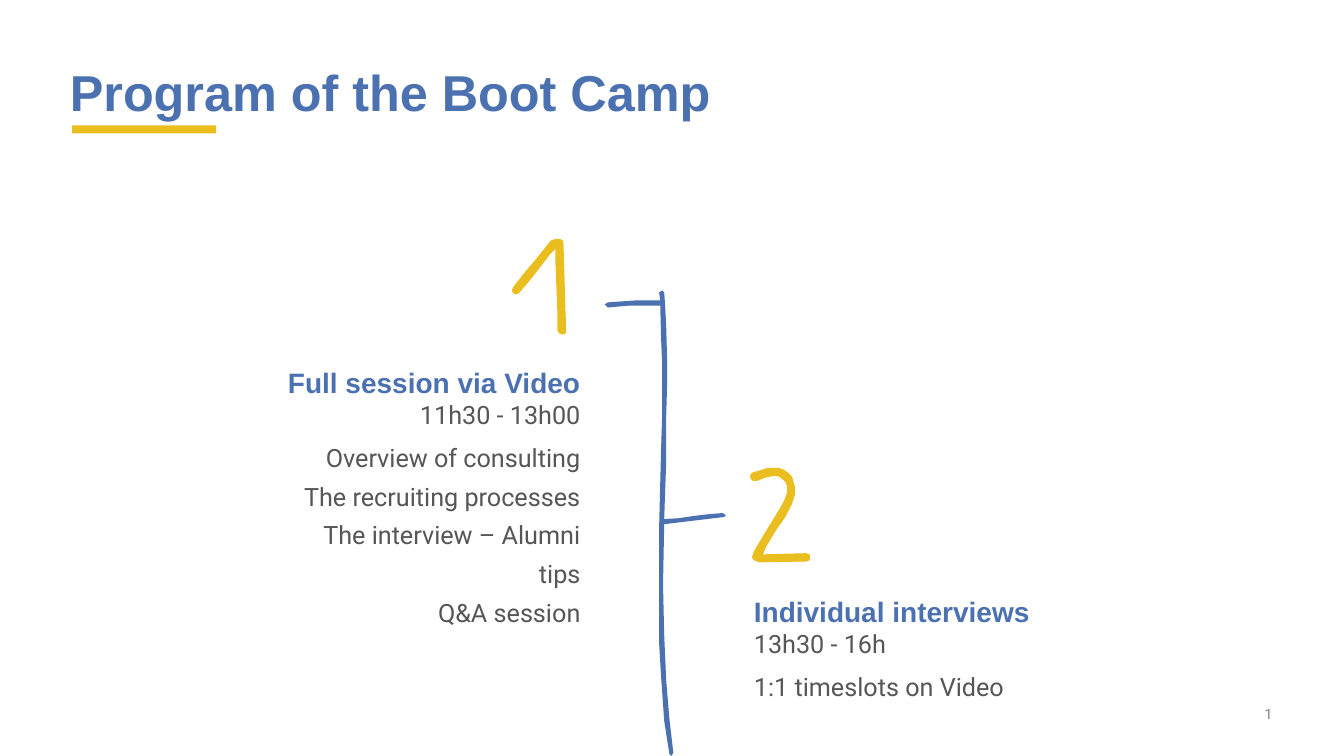
from dataclasses import dataclass

from pptx import Presentation
from pptx.dml.color import RGBColor
from pptx.enum.shapes import MSO_SHAPE as Shape
from pptx.enum.text import MSO_ANCHOR as Anchor, MSO_AUTO_SIZE as AutoSize, PP_ALIGN as Align
from pptx.util import Cm, Pt


@dataclass(frozen=True)
class TextStyle:
    size: float
    color: str
    font: str = "Roboto"
    bold: bool = False


class Theme:
    blue = "4B71B1"
    yellow = "EBBE20"
    title = TextStyle(36, blue, "Arial", True)
    heading = TextStyle(20, blue, "Arial", True)
    body = TextStyle(18, "565656")
    page_number = TextStyle(10, "7E7E7E")


@dataclass(frozen=True)
class Line:
    text: str
    style: TextStyle
    before: float = 0
    spacing: float = 1.0
    indent: float = 0


ONE = [
    (14, 6.02), (13.87, 6.07), (13.77, 6.2), (13.49, 6.55), (13.21, 6.88), (12.93, 7.24),
    (12.9, 7.32), (12.93, 7.39), (13, 7.42), (13.08, 7.39), (13.44, 6.96), (13.87, 6.4),
    (14, 6.27), (14, 6.68), (14.05, 7.92), (14.05, 8.33), (14.1, 8.41), (14.17, 8.43),
    (14.25, 8.41), (14.27, 8.33), (14.25, 7.77), (14.2, 6.1), (14.17, 6.05), (14.1, 6.02),
]
TWO = [
    (19.48, 11.79), (19.35, 11.79), (19.2, 11.84), (18.95, 11.91), (18.9, 11.99),
    (18.92, 12.07), (18.97, 12.12), (19.08, 12.12), (19.28, 12.04), (19.51, 11.99),
    (19.63, 12.01), (19.71, 12.07), (19.79, 12.14), (19.84, 12.27), (19.84, 12.4),
    (19.76, 12.62), (19.63, 12.85), (19.15, 13.64), (19, 13.89), (18.95, 14.05),
    (19, 14.12), (19.13, 14.17), (19.23, 14.17), (20.32, 14.15), (20.4, 14.12),
    (20.42, 14.05), (20.4, 13.97), (20.32, 13.94), (19.23, 13.97), (19.3, 13.79),
    (19.56, 13.36), (19.79, 13.03), (19.96, 12.7), (20.04, 12.45), (20.04, 12.29),
    (19.96, 12.01), (19.86, 11.91), (19.76, 11.84), (19.63, 11.79),
]
TIMELINE = [
    (18.29, 12.98), (18.21, 12.93), (17.93, 12.95), (17.5, 13), (17.09, 13.06),
    (16.74, 13.08), (16.79, 11.63), (16.79, 10.49), (16.81, 9.78), (16.81, 8.94),
    (16.79, 8.23), (16.76, 7.65), (16.74, 7.37), (16.69, 7.32), (16.61, 7.37),
    (16.64, 7.57), (16.03, 7.57), (15.32, 7.62), (15.24, 7.67), (15.32, 7.75),
    (15.88, 7.7), (16.64, 7.7), (16.66, 8.51), (16.69, 9.22), (16.69, 10.36),
    (16.66, 11.35), (16.61, 13.34), (16.61, 16.18), (16.66, 17.04), (16.74, 18.16),
    (16.87, 19), (16.92, 19.05), (16.97, 18.97), (16.87, 18.11), (16.79, 17.15),
    (16.74, 16), (16.71, 14.73), (16.74, 13.21), (17.4, 13.13), (18.24, 13.03),
    (18.29, 13),
]


class SlideBuilder:
    """Draw themed elements on one slide, with lengths in centimetres."""

    def __init__(self, presentation, theme):
        self.theme = theme
        self.slide = presentation.slides.add_slide(presentation.slide_layouts[5])

    def fill_text(self, shape, lines, align=Align.LEFT):
        frame = shape.text_frame
        frame.word_wrap = True
        frame.auto_size = AutoSize.NONE
        frame.vertical_anchor = Anchor.TOP
        frame.margin_left = frame.margin_right = frame.margin_bottom = 0
        frame.margin_top = Cm(0.03)
        frame.text = "\n".join(line.text for line in lines)
        for paragraph, line in zip(frame.paragraphs, lines):
            paragraph.alignment = align
            paragraph.space_before = Pt(line.before)
            paragraph.line_spacing = line.spacing
            if line.indent:
                paragraph._p.get_or_add_pPr().set("marL", str(Cm(line.indent)))
            for run in paragraph.runs:
                run.font.name = line.style.font
                run.font.size = Pt(line.style.size)
                run.font.bold = line.style.bold
                run.font.color.rgb = RGBColor.from_string(line.style.color)

    def title(self, text, left, top, width, height):
        shape = self.slide.shapes.title
        shape.left, shape.top, shape.width, shape.height = map(Cm, (left, top, width, height))
        self.fill_text(shape, [Line(text, self.theme.title, 1)])

    def text(self, lines, left, top, width, height, align=Align.LEFT):
        shape = self.slide.shapes.add_textbox(*map(Cm, (left, top, width, height)))
        self.fill_text(shape, lines, align)

    def paint(self, shape, color):
        shape.shadow.inherit = False
        shape.fill.solid()
        shape.fill.fore_color.rgb = RGBColor.from_string(color)
        shape.line.fill.background()

    def bar(self, color, left, top, width, height):
        box = map(Cm, (left, top, width, height))
        shape = self.slide.shapes.add_shape(Shape.RECTANGLE, *box)
        self.paint(shape, color)

    def outline(self, points, color):
        corners = [(Cm(x), Cm(y)) for x, y in points]
        builder = self.slide.shapes.build_freeform(*corners[0])
        builder.add_line_segments(corners[1:], close=True)
        self.paint(builder.convert_to_shape(), color)


def main():
    presentation = Presentation()
    presentation.slide_width, presentation.slide_height = Cm(33.87), Cm(19.05)
    theme = Theme()
    builder = SlideBuilder(presentation, theme)

    builder.title("Program of the Boot Camp", 1.76, 1.5, 16.23, 1.6)
    builder.bar(theme.yellow, 1.82, 3.16, 3.63, 0.2)
    builder.outline(TIMELINE, theme.blue)
    for numeral in (ONE, TWO):
        builder.outline(numeral, theme.yellow)

    topics = ("Overview of consulting", "The recruiting processes", "The interview – Alumni tips")
    builder.text(
        [
            Line("Full session via Video", theme.heading, 1.1),
            Line("11h30 - 13h00", theme.body, 0.1),
            *(Line(topic, theme.body, 0 if number else 3.4, 1.28, 0.4)
              for number, topic in enumerate(topics)),
            Line("Q&A session", theme.body, 6),
        ],
        6.91, 9.17, 7.72, 6.8, Align.RIGHT,
    )
    builder.text(
        [
            Line("Individual interviews", theme.heading, 1),
            Line("13h30 - 16h", theme.body, 0.1),
            Line("1:1 timeslots on Video", theme.body, 9.3),
        ],
        19, 14.94, 7.5, 2.77,
    )
    builder.text([Line("1", theme.page_number, 0.9)], 31.87, 17.75, 0.3, 0.48)
    presentation.save("out.pptx")


if __name__ == "__main__":
    main()
